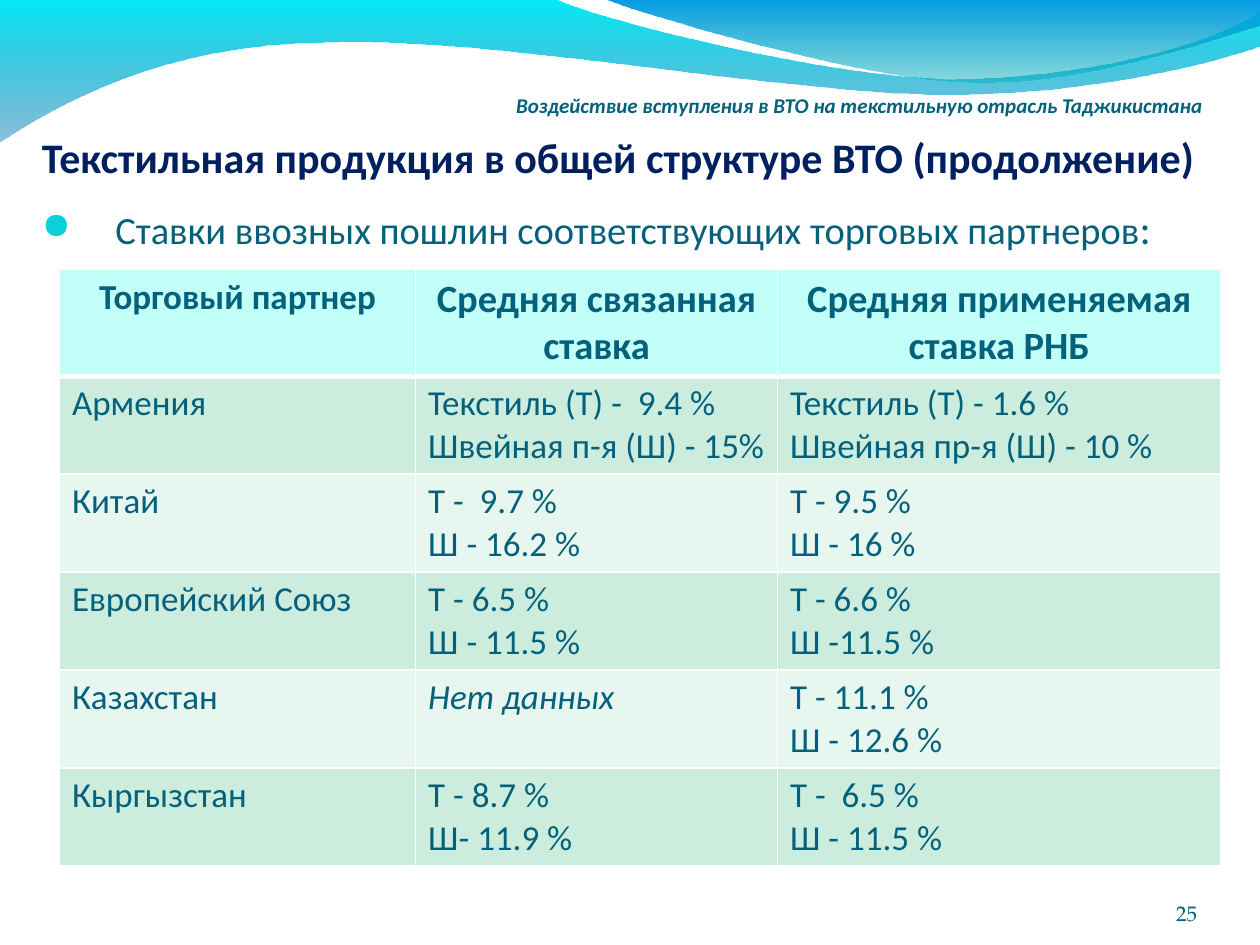
from lxml.etree import SubElement
from pptx import Presentation
from pptx.dml.color import RGBColor
from pptx.enum.shapes import MSO_SHAPE
from pptx.enum.text import MSO_ANCHOR, PP_ALIGN
from pptx.oxml.ns import qn
from pptx.util import Pt

HUES = {
    "white": "FFFFFF", "text": "04617B", "title": "002060", "page": "045C75",
    "bullet": "0BD0D9", "head": "C3FFF9", "odd": "CCECDE", "even": "E7F6EF",
    "aqua": "00EBF8", "sea": "0079AF", "sky": "009BE5", "teal": "00ADB6",
}
WAVES = [
    ([
        [(0, -0.7)],
        [(317, -0.7)],
        [(343, 12), (478, 45), (546, 45)],
        [(614, 45), (690, 27), (720, 6.5)],
        [(720.7, 26)],
        [(708, 32), (626, 55), (537, 54)],
        [(448, 54), (275, 20), (185, 24.5)],
        [(93, 25), (33, 60), (-0.7, 81.4)],
    ], "aqua", "sea"),
    ([
        [(345, -0.7)],
        [(366, 8), (491, 45), (554, 47)],
        [(616, 50), (692, 23), (720, 15)],
        [(720, 0)],
    ], "sky", "teal"),
]
HEADS = [("Торговый партнер", 20), ("Средняя связанная ставка", 22),
         ("Средняя применяемая ставка РНБ", 22)]
RATES = [
    ("Армения", ["Текстиль (T) -  9.4 %", "Швейная п-я (Ш) - 15%"],
     ["Текстиль (T) - 1.6 %", "Швейная пр-я (Ш) - 10 %"]),
    ("Китай", ["T -  9.7 %", "Ш - 16.2 %"], ["T - 9.5 %", "Ш - 16 %"]),
    ("Европейский Союз", ["T - 6.5 %", "Ш - 11.5 %"],
     ["T - 6.6 %", "Ш -11.5 %"]),
    ("Казахстан", ["Нет данных"], ["T - 11.1 %", "Ш - 12.6 %"]),
    ("Кыргызстан", ["T - 8.7 %", "Ш- 11.9 %"], ["T -  6.5 %", "Ш - 11.5 %"]),
]
WIDTHS = [203.5, 206.8, 253.5]
HEAD_H, ROW_H = 61, 56


def tint(name):
    """Return the named colour."""
    return RGBColor.from_string(HUES[name])


def add_run(para, text, size, hue="text", bold=False, slant=False,
            face="Calibri"):
    """Add one styled run to a paragraph."""
    run = para.add_run()
    run.text = text
    font = run.font
    font.name, font.size = face, Pt(size)
    font.bold, font.italic = bold, slant
    font.color.rgb = tint(hue)


def bend(shape, parts):
    """Turn each three-point part of an outline into one curve."""
    lines = iter(list(shape.element.iter(qn("a:lnTo"))))
    for part in parts:
        group = [next(lines) for _ in part]
        if len(part) == 3:
            arc = group[0].makeelement(qn("a:cubicBezTo"))
            group[0].addprevious(arc)
            for line in group:
                arc.append(line[0])
                line.getparent().remove(line)


def add_wave(slide, parts, top, base):
    """Draw a curved band that fades downwards."""
    points = [(Pt(x), Pt(y)) for part in parts for x, y in part]
    pen = slide.shapes.build_freeform(*points[0])
    pen.add_line_segments(points[1:])
    wave = pen.convert_to_shape()
    bend(wave, parts[1:])
    wave.shadow.inherit = False
    wave.line.fill.background()
    wave.fill.gradient()
    wave.fill.gradient_angle = 270
    for stop, hue in zip(wave.fill.gradient_stops, (top, base)):
        stop.color.rgb = tint(hue)
    last = list(wave.element.iter(qn("a:gs")))[-1]
    SubElement(last[0], qn("a:alpha"), val="45000")


def add_label(slide, box, text, inset=0, **style):
    """Add a right-aligned line of text at the foot of its box."""
    frame = slide.shapes.add_textbox(*map(Pt, box)).text_frame
    frame.word_wrap = True
    frame.vertical_anchor = MSO_ANCHOR.BOTTOM
    frame.margin_left = frame.margin_right = frame.margin_bottom = 0
    frame.margin_top = Pt(inset)
    para = frame.paragraphs[0]
    para.alignment = PP_ALIGN.RIGHT
    add_run(para, text, 12, **style)


def add_bullet(para, indent):
    """Give a paragraph a round bullet with a hanging indent."""
    props = para._p.get_or_add_pPr()
    props.set("marL", str(Pt(indent)))
    props.set("indent", str(-Pt(indent)))
    paint = SubElement(props, qn("a:buClr"))
    SubElement(paint, qn("a:srgbClr"), val=HUES["bullet"])
    SubElement(props, qn("a:buSzPct"), val="95000")
    SubElement(props, qn("a:buFont"), typeface="OpenSymbol")
    SubElement(props, qn("a:buChar"), char="●")


def add_body(slide):
    """Add the white panel with the title and the lead line."""
    panel = slide.shapes.add_shape(
        MSO_SHAPE.RECTANGLE, Pt(16.9), Pt(71.5), Pt(687), Pt(425.5))
    panel.shadow.inherit = False
    panel.fill.solid()
    panel.fill.fore_color.rgb = tint("white")
    panel.line.fill.background()
    frame = panel.text_frame
    frame.word_wrap = True
    frame.vertical_anchor = MSO_ANCHOR.TOP
    title = frame.paragraphs[0]
    title.alignment = PP_ALIGN.LEFT
    add_run(title, "Текстильная продукция в общей структуре ВТО (продолжение)",
            24, "title", bold=True)
    lead = frame.add_paragraph()
    add_bullet(lead, 42)
    lead.alignment = PP_ALIGN.LEFT
    lead.space_before = Pt(12)
    add_run(lead, "Ставки ввозных пошлин соответствующих торговых партнеров", 22)
    add_run(lead, ":", 24)


def add_edge(cell, side, width):
    """Draw a white border on one side of a cell."""
    edge = SubElement(cell._tc.get_or_add_tcPr(), qn("a:" + side),
                      w=str(Pt(width)))
    fill = SubElement(edge, qn("a:solidFill"))
    SubElement(fill, qn("a:srgbClr"), val=HUES["white"])


def fill_cell(cell, lines, size, hue, row):
    """Write the lines of a cell and set its borders and fill."""
    head = row == 0
    for side, width in (("lnL", 1), ("lnR", 1), ("lnT", 3 if row == 1 else 1),
                        ("lnB", 3 if head else 1)):
        add_edge(cell, side, width)
    cell.fill.solid()
    cell.fill.fore_color.rgb = tint(hue)
    frame = cell.text_frame
    for i, line in enumerate(lines):
        para = frame.add_paragraph() if i else frame.paragraphs[0]
        para.alignment = PP_ALIGN.CENTER if head else PP_ALIGN.LEFT
        add_run(para, line, size, bold=head, slant=line == "Нет данных")


def add_rates(slide):
    """Add the table of tariff rates."""
    high = HEAD_H + ROW_H * len(RATES)
    grid = slide.shapes.add_table(
        len(RATES) + 1, len(WIDTHS), Pt(34), Pt(154),
        Pt(sum(WIDTHS)), Pt(high)).table
    grid.first_row = grid.horz_banding = False
    for col, width in zip(grid.columns, WIDTHS):
        col.width = Pt(width)
    for i, row in enumerate(grid.rows):
        row.height = Pt(ROW_H if i else HEAD_H)
    for j, (text, size) in enumerate(HEADS):
        fill_cell(grid.cell(0, j), [text], size, "head", 0)
    for i, (land, bound, used) in enumerate(RATES, 1):
        for j, lines in enumerate(([land], bound, used)):
            fill_cell(grid.cell(i, j), lines, 20, "odd" if i % 2 else "even", i)


def main():
    """Build and save the slide."""
    deck = Presentation()
    deck.slide_width, deck.slide_height = Pt(720), Pt(540)
    slide = deck.slides.add_slide(deck.slide_layouts[6])
    for wave in WAVES:
        add_wave(slide, *wave)
    add_label(slide, (39.5, 44.5, 648, 22.5),
              "Воздействие вступления в ВТО на текстильную отрасль Таджикистана",
              inset=3.6, bold=True, slant=True)
    add_body(slide)
    add_label(slide, (624, 500.5, 60, 28.5), "25", hue="page",
              face="TeX Gyre Pagella")
    add_rates(slide)
    deck.save("out.pptx")


if __name__ == "__main__":
    main()
